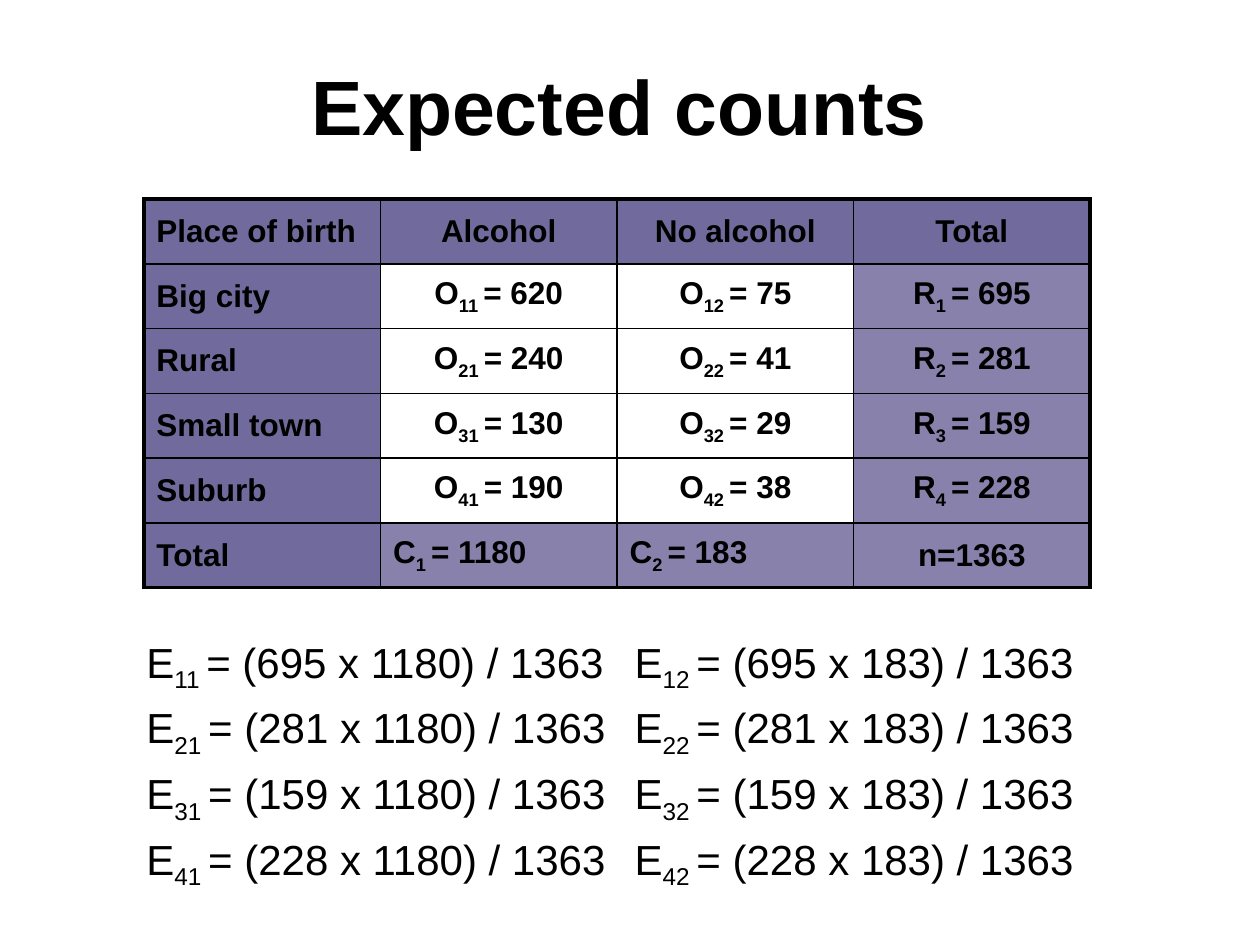
import dataclasses

import pptx
import pptx.dml.color
import pptx.enum.text
import pptx.oxml
import pptx.oxml.ns
import pptx.util

Pt = pptx.util.Pt
ALIGN = pptx.enum.text.PP_ALIGN
MIDDLE = pptx.enum.text.MSO_ANCHOR.MIDDLE


@dataclasses.dataclass(frozen=True)
class Theme:
    font: str = "Arial"
    ink: str = "000000"
    header: str = "716A9C"
    total: str = "8781AB"
    title_size: int = 44
    formula_size: int = 24
    cell_size: int = 18
    outer_line: float = 2.25
    inner_line: float = 1


THEME = Theme()
ROW_SUMS = [695, 281, 159, 228]
COLUMN_SUMS = [1180, 183]
COUNTS = [(620, 75), (240, 41), (130, 29), (190, 38)]
PLACES = ["Big city", "Rural", "Small town", "Suburb"]
TOTAL = 1363


def rgb(color):
    return pptx.dml.color.RGBColor.from_string(color)


def symbol(letter, index, value):
    """Mark the subscript index with a pair of underscores."""
    return f"{letter}_{index} _= {value}"


def write(p, text, size, bold=False, align=ALIGN.LEFT, before=0):
    """Fill a paragraph; text between underscores becomes subscript."""
    p.alignment = align
    p.space_before = Pt(before)
    p.font.name, p.font.size, p.font.bold = THEME.font, Pt(size), bold
    p.font.color.rgb = rgb(THEME.ink)
    for i, part in enumerate(text.split("_")):
        r = p.add_run()
        r.text = part
        if i % 2:
            r.font._element.set("baseline", "-25000")


def add_text_box(s, left, top, width, height):
    tf = s.shapes.add_textbox(Pt(left), Pt(top), Pt(width), Pt(height)).text_frame
    tf.word_wrap = True
    return tf


def add_title(s):
    tf = add_text_box(s, 30, 30, 648, 60)
    tf.vertical_anchor = MIDDLE
    write(tf.paragraphs[0], "Expected counts", THEME.title_size, True, ALIGN.CENTER)


def set_borders(cell, widths):
    """Draw the left, right, top and bottom lines, in that order."""
    tc_pr = cell._tc.get_or_add_tcPr()
    for i, (side, width) in enumerate(zip("LRTB", widths)):
        tc_pr.insert(i, pptx.oxml.parse_xml(
            f'<a:ln{side} {pptx.oxml.ns.nsdecls("a")} w="{Pt(width)}">'
            f'<a:solidFill><a:srgbClr val="{THEME.ink}"/></a:solidFill></a:ln{side}>'))


def table_rows():
    rows = [["Place of birth", "Alcohol", "No alcohol", "Total"]]
    for i, (place, counts, row_sum) in enumerate(zip(PLACES, COUNTS, ROW_SUMS), 1):
        observed = [symbol("O", f"{i}{j}", n) for j, n in enumerate(counts, 1)]
        rows.append([place, *observed, symbol("R", i, row_sum)])
    sums = [symbol("C", j, n) for j, n in enumerate(COLUMN_SUMS, 1)]
    return rows + [["Total", *sums, f"n={TOTAL}"]]


def add_count_table(s):
    rows = table_rows()
    last_row, last_col = len(rows) - 1, len(rows[0]) - 1
    table = s.shapes.add_table(len(rows), len(rows[0]), Pt(82.2), Pt(113.8),
                               Pt(540.8), Pt(222)).table
    table.first_row = table.horz_banding = False
    for i, row in enumerate(rows):
        for j, text in enumerate(row):
            cell = table.cell(i, j)
            cell.vertical_anchor = MIDDLE
            if i == 0 or j == 0:
                fill = THEME.header
            elif i == last_row or j == last_col:
                fill = THEME.total
            else:
                fill = None
            if fill:
                cell.fill.solid()
                cell.fill.fore_color.rgb = rgb(fill)
            else:
                cell.fill.background()
            edges = (j == 0, j == last_col, i == 0, i == last_row)
            set_borders(cell, [THEME.outer_line if e else THEME.inner_line for e in edges])
            left = j == 0 or (i == last_row and j < last_col)
            write(cell.text_frame.paragraphs[0], text, THEME.cell_size, True,
                  ALIGN.LEFT if left else ALIGN.CENTER, 3.6)


def add_formulas(s):
    tf = add_text_box(s, 76.5, 360, 624, 156)
    for i, row_sum in enumerate(ROW_SUMS, 1):
        p = tf.paragraphs[0] if i == 1 else tf.add_paragraph()
        formulas = [symbol("E", f"{i}{j}", f"({row_sum} x {n}) / {TOTAL}")
                    for j, n in enumerate(COLUMN_SUMS, 1)]
        write(p, " \t".join(formulas), THEME.formula_size, before=4.8)
        p_pr = p._p.get_or_add_pPr()
        p_pr.set("marL", str(Pt(27)))
        p_pr.set("indent", str(-Pt(27)))


def main():
    prs = pptx.Presentation()
    prs.slide_width, prs.slide_height = Pt(720), Pt(540)
    s = prs.slides.add_slide(prs.slide_layouts[6])
    add_formulas(s)
    add_count_table(s)
    add_title(s)
    prs.save("out.pptx")


if __name__ == "__main__":
    main()
